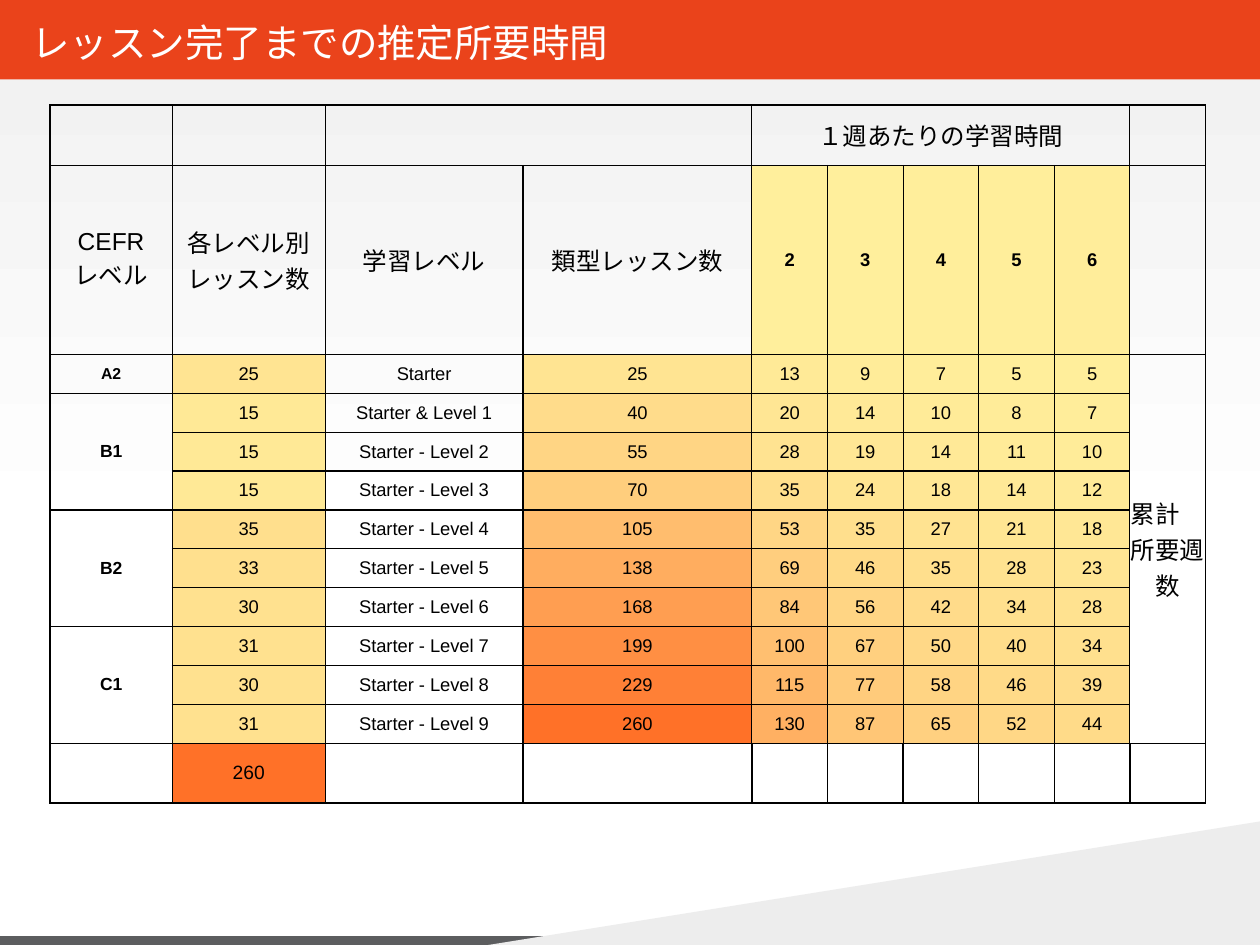
from itertools import accumulate
from math import ceil

from lxml import etree
from pptx import Presentation
from pptx.dml.color import RGBColor
from pptx.enum.shapes import MSO_SHAPE
from pptx.enum.text import MSO_ANCHOR, PP_ALIGN
from pptx.oxml.ns import qn
from pptx.util import Pt

RECTANGLE, TRIANGLE = MSO_SHAPE.RECTANGLE, MSO_SHAPE.RIGHT_TRIANGLE
MIDDLE, CENTER = MSO_ANCHOR.MIDDLE, PP_ALIGN.CENTER

FONT = "Arial"
BLACK = RGBColor(0x00, 0x00, 0x00)
WHITE = RGBColor(0xFF, 0xFF, 0xFF)
TITLE_RED = RGBColor(0xEA, 0x43, 0x1B)
FOOTER_GRAY = RGBColor(0x5C, 0x5D, 0x5F)
CORNER_GRAY = RGBColor(0xED, 0xED, 0xED)
BACKGROUND_GRAY = RGBColor(0xF0, 0xF0, 0xF0)
SCALE_LOW = RGBColor(0xFF, 0xEF, 0x9C)
SCALE_HIGH = RGBColor(0xFF, 0x71, 0x28)

TITLE = "レッスン完了までの推定所要時間"
HOURS_HEADING = "１週あたりの学習時間"
COLUMN_HEADINGS = ["CEFR\nレベル", "各レベル別レッスン数", "学習レベル", "類型レッスン数"]
WEEKS_HEADING = "累計　所要週数"
HOURS_PER_WEEK = [2, 3, 4, 5, 6]
CEFR_LEVELS = [("A2", 1, 9), ("B1", 3, 10), ("B2", 3, 10), ("C1", 3, 10)]  # name, rows, size
STUDY_LEVELS = [
    ("Starter", 25),
    ("Starter & Level 1", 15),
    ("Starter - Level 2", 15),
    ("Starter - Level 3", 15),
    ("Starter - Level 4", 35),
    ("Starter - Level 5", 33),
    ("Starter - Level 6", 30),
    ("Starter - Level 7", 31),
    ("Starter - Level 8", 30),
    ("Starter - Level 9", 31),
]
TOTALS = list(accumulate(lessons for _, lessons in STUDY_LEVELS))

SLIDE_WIDTH, SLIDE_HEIGHT = 720, 540
TABLE_LEFT, TABLE_TOP = 28.6, 60
COLUMN_WIDTHS = [69.8, 87.5, 113, 130.8] + [43.2] * 6
ROW_HEIGHTS = [34.5, 108] + [22.25] * len(STUDY_LEVELS) + [34.2]
FIRST_BODY_ROW, FIRST_HOURS_COLUMN = 2, 4
LAST_ROW, LAST_COLUMN = len(ROW_HEIGHTS) - 1, len(COLUMN_WIDTHS) - 1
THIN, THICK = 0.75, 1


def scale_color(value):
    """Colour of a value on the scale from the fewest hours to all lessons."""
    low, high = HOURS_PER_WEEK[0], TOTALS[-1]
    share = (value - low) / (high - low)
    return RGBColor(*(round(a + (b - a) * share) for a, b in zip(SCALE_LOW, SCALE_HIGH)))


def add_filled_shape(slide, kind, left, top, width, height, color):
    shape = slide.shapes.add_shape(kind, Pt(left), Pt(top), Pt(width), Pt(height))
    shape.shadow.inherit = False
    shape.fill.solid()
    shape.fill.fore_color.rgb = color
    shape.line.fill.background()
    return shape


def set_font(paragraph, size, color, bold=False):
    for run in paragraph.runs:
        run.font.name = FONT
        run.font.size = Pt(size)
        run.font.bold = bold
        run.font.color.rgb = color


def add_borders(cell, row, column):
    """Thin grid lines, with thicker ones around the table and between totals."""
    thick_sides = {
        "L": column == 0 or (row == LAST_ROW and column >= 3),
        "R": column == LAST_COLUMN,
        "T": row == 0,
        "B": row == LAST_ROW,
    }
    properties = cell._tc.get_or_add_tcPr()
    for side, thick in thick_sides.items():
        line = etree.SubElement(properties, qn(f"a:ln{side}"), w=str(Pt(THICK if thick else THIN)))
        fill = etree.SubElement(line, qn("a:solidFill"))
        etree.SubElement(fill, qn("a:srgbClr"), val=str(BLACK))


def write_cell(cell, text, size=10.5, bold=False, color=None):
    cell.margin_left = cell.margin_right = cell.margin_top = cell.margin_bottom = 0
    cell.vertical_anchor = MIDDLE
    paragraph = cell.text_frame.paragraphs[0]
    paragraph.text = str(text)
    paragraph.alignment = CENTER
    set_font(paragraph, size, BLACK, bold)
    if color is not None:
        cell.fill.solid()
        cell.fill.fore_color.rgb = color


def write_value(cell, text, value, **style):
    write_cell(cell, text, color=scale_color(value), **style)


def add_background(slide):
    fill = slide.background.fill
    fill.gradient()
    fill.gradient_angle = 270
    for stop, position, color in zip(fill.gradient_stops, (0, 0.57), (BACKGROUND_GRAY, WHITE)):
        stop.position = position
        stop.color.rgb = color

    add_filled_shape(slide, RECTANGLE, 0, 535, SLIDE_WIDTH, 6, FOOTER_GRAY)
    corner = add_filled_shape(slide, TRIANGLE, 276.5, 469.4, 443.5, 71, CORNER_GRAY)
    corner.element.spPr.xfrm.set("flipH", "1")
    add_filled_shape(slide, RECTANGLE, 0, 0, SLIDE_WIDTH, 45.4, TITLE_RED)


def add_title(slide):
    box = slide.shapes.add_textbox(Pt(11), Pt(4), Pt(648), Pt(39.6))
    frame = box.text_frame
    frame.word_wrap = True
    frame.vertical_anchor = MIDDLE
    frame.text = TITLE
    set_font(frame.paragraphs[0], 22, WHITE)


def add_lesson_table(slide):
    table = slide.shapes.add_table(
        len(ROW_HEIGHTS), len(COLUMN_WIDTHS), Pt(TABLE_LEFT), Pt(TABLE_TOP),
        Pt(sum(COLUMN_WIDTHS)), Pt(sum(ROW_HEIGHTS))).table
    table.first_row = table.horz_banding = False
    for column, width in zip(table.columns, COLUMN_WIDTHS):
        column.width = Pt(width)
    for row, height in zip(table.rows, ROW_HEIGHTS):
        row.height = Pt(height)
    for row in range(len(ROW_HEIGHTS)):
        for column in range(len(COLUMN_WIDTHS)):
            cell = table.cell(row, column)
            add_borders(cell, row, column)
            cell.fill.background()

    table.cell(0, 2).merge(table.cell(0, 3))
    hours_cell = table.cell(0, FIRST_HOURS_COLUMN)
    hours_cell.merge(table.cell(0, LAST_COLUMN - 1))
    write_cell(hours_cell, HOURS_HEADING, 14)
    for column, heading in enumerate(COLUMN_HEADINGS):
        write_cell(table.cell(1, column), heading, 14)
    for column, hours in enumerate(HOURS_PER_WEEK, FIRST_HOURS_COLUMN):
        write_value(table.cell(1, column), hours, hours, bold=True)

    weeks_cell = table.cell(FIRST_BODY_ROW, LAST_COLUMN)
    weeks_cell.merge(table.cell(LAST_ROW - 1, LAST_COLUMN))
    write_cell(weeks_cell, WEEKS_HEADING, 14)
    weeks_cell._tc.get_or_add_tcPr().set("vert", "eaVert")

    row = FIRST_BODY_ROW
    for name, row_count, size in CEFR_LEVELS:
        cell = table.cell(row, 0)
        if row_count > 1:
            cell.merge(table.cell(row + row_count - 1, 0))
        write_cell(cell, name, size, bold=True)
        row += row_count

    for row, ((level, lessons), total) in enumerate(zip(STUDY_LEVELS, TOTALS), FIRST_BODY_ROW):
        write_value(table.cell(row, 1), lessons, lessons)
        write_cell(table.cell(row, 2), level)
        write_value(table.cell(row, 3), total, total)
        for column, hours in enumerate(HOURS_PER_WEEK, FIRST_HOURS_COLUMN):
            write_value(table.cell(row, column), ceil(total / hours), total / hours)
    write_value(table.cell(LAST_ROW, 1), TOTALS[-1], TOTALS[-1], size=11)


def main():
    presentation = Presentation()
    presentation.slide_width, presentation.slide_height = Pt(SLIDE_WIDTH), Pt(SLIDE_HEIGHT)
    slide = presentation.slides.add_slide(presentation.slide_layouts[6])
    add_background(slide)
    add_title(slide)
    add_lesson_table(slide)
    presentation.save("out.pptx")


if __name__ == "__main__":
    main()
